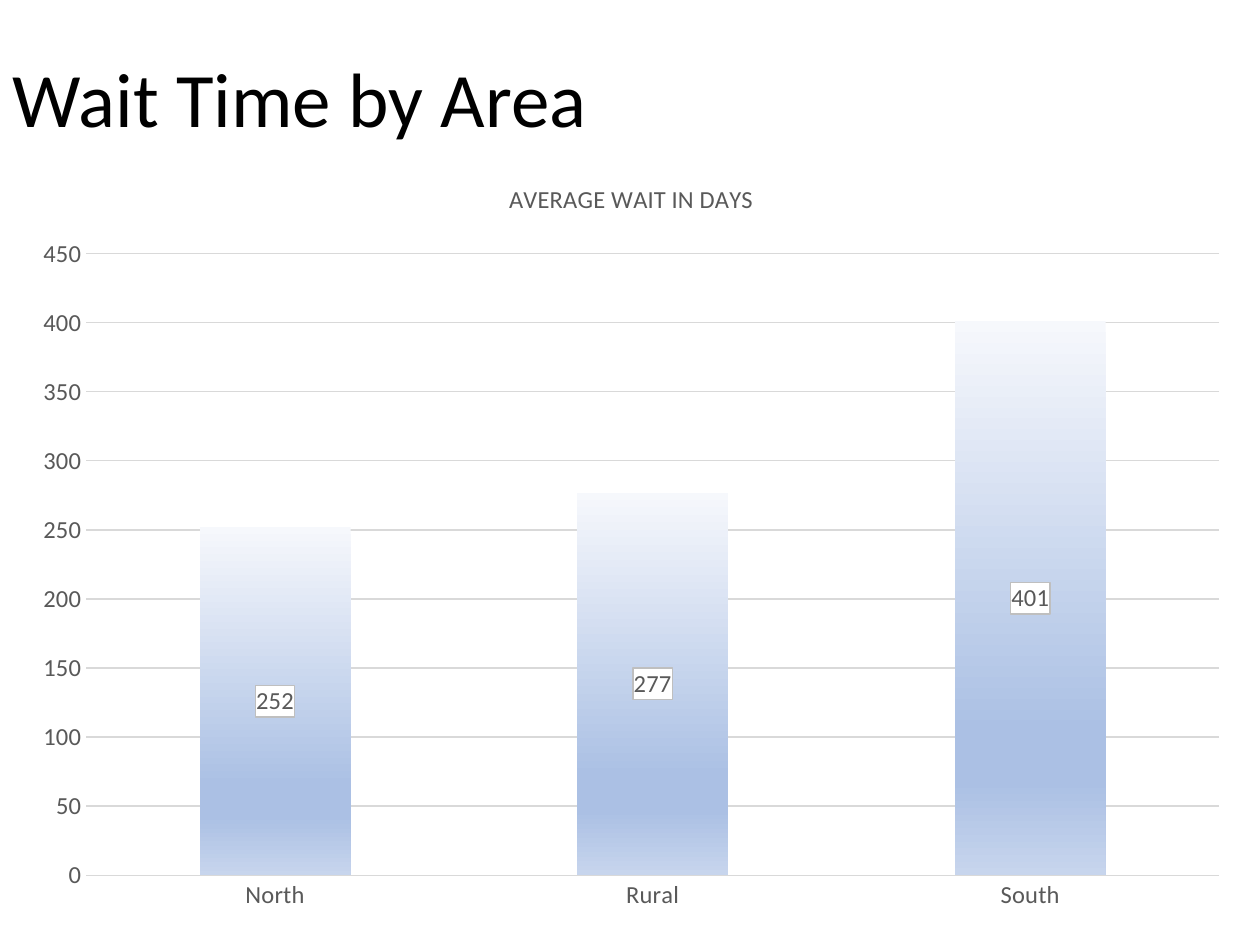
import pptx
import pptx.chart.data
import pptx.dml.color
import pptx.enum.chart
import pptx.enum.text
import pptx.oxml
import pptx.oxml.ns
import pptx.util

WIDTH, HEIGHT = pptx.util.Inches(10), pptx.util.Inches(7.5)
FONT = "Calibri"
COLORS = {"title": "000000", "text": "595959", "grid": "D9D9D9",
          "label_fill": "FFFFFF", "label_line": "BFBFBF"}
BAR_GRADIENT = [(0, "F6F8FC"), (74, "ABC0E4"), (83, "ABC0E4"), (100, "C7D5ED")]
WAIT_DAYS = {"North": 252, "Rural": 277, "South": 401}
# Inner plot area as shares of the chart
PLOT_LAYOUT = {"x": 0.055, "y": 0.127, "w": 0.925, "h": 0.807}
NAMESPACES = pptx.oxml.ns.nsdecls("c", "a")


def rgb(name):
    return pptx.dml.color.RGBColor.from_string(COLORS[name])


def apply_format(target, values):
    for name, value in values.items():
        setattr(target, name, value)


def format_font(font, size, color):
    apply_format(font, {"name": FONT, "size": pptx.util.Pt(size), "bold": False})
    font.color.rgb = rgb(color)


def box(left, top, width, height):
    """Turn shares of the slide into lengths."""
    return (int(left * WIDTH), int(top * HEIGHT),
            int(width * WIDTH), int(height * HEIGHT))


def add_title(slide, text):
    title = slide.shapes.title
    apply_format(title, dict(zip(("left", "top", "width", "height"),
                                 box(0, 0, 1, 0.217))))
    frame = title.text_frame
    apply_format(frame, {"text": text, "word_wrap": True,
                         "vertical_anchor": pptx.enum.text.MSO_ANCHOR.MIDDLE})
    paragraph = frame.paragraphs[0]
    apply_format(paragraph, {"alignment": pptx.enum.text.PP_ALIGN.LEFT,
                             "line_spacing": 0.9})
    format_font(paragraph.runs[0].font, 44, "title")


def format_axes(chart):
    for axis in (chart.category_axis, chart.value_axis):
        apply_format(axis, {
            "major_tick_mark": pptx.enum.chart.XL_TICK_MARK.NONE,
            "minor_tick_mark": pptx.enum.chart.XL_TICK_MARK.NONE})
        axis.format.line.fill.background()
        format_font(axis.tick_labels.font, 14, "text")
    value_axis = chart.value_axis
    apply_format(value_axis, {"minimum_scale": 0, "maximum_scale": 450,
                              "major_unit": 50, "has_major_gridlines": True})
    apply_format(value_axis.tick_labels,
                 {"number_format": "0", "number_format_is_linked": False})
    grid_line = value_axis.major_gridlines.format.line
    grid_line.color.rgb = rgb("grid")
    grid_line.width = pptx.util.Pt(0.75)


def fill_bars(series):
    """Give the bars a vertical gradient with several stops."""
    stops = "".join(
        f'<a:gs pos="{position * 1000}"><a:srgbClr val="{color}"/></a:gs>'
        for position, color in BAR_GRADIENT)
    series.format.fill.gradient()
    gradient = series.format.fill._xPr.find(pptx.oxml.ns.qn("a:gradFill"))
    gradient.getparent().replace(gradient, pptx.oxml.parse_xml(
        f'<a:gradFill {NAMESPACES}><a:gsLst>{stops}</a:gsLst>'
        '<a:lin ang="5400000" scaled="0"/></a:gradFill>'))
    series.format.line.fill.background()


def label_bars(series):
    labels = series.data_labels
    apply_format(labels, {
        "show_value": True, "number_format": "0",
        "number_format_is_linked": False,
        "position": pptx.enum.chart.XL_LABEL_POSITION.CENTER})
    format_font(labels.font, 14, "text")
    number_format = labels._element.find(pptx.oxml.ns.qn("c:numFmt"))
    number_format.addnext(pptx.oxml.parse_xml(
        f'<c:spPr {NAMESPACES}><a:solidFill>'
        f'<a:srgbClr val="{COLORS["label_fill"]}"/></a:solidFill>'
        f'<a:ln w="9525"><a:solidFill><a:srgbClr val="{COLORS["label_line"]}"/>'
        '</a:solidFill></a:ln></c:spPr>'))


def place_plot(chart):
    plot_area = chart._chartSpace.chart.plotArea
    for layout in plot_area.findall(pptx.oxml.ns.qn("c:layout")):
        plot_area.remove(layout)
    modes = '<c:xMode val="edge"/><c:yMode val="edge"/>'
    shares = "".join(f'<c:{key} val="{value}"/>'
                     for key, value in PLOT_LAYOUT.items())
    plot_area.insert(0, pptx.oxml.parse_xml(
        f'<c:layout {NAMESPACES}><c:manualLayout><c:layoutTarget val="inner"/>'
        f'{modes}{shares}</c:manualLayout></c:layout>'))


def add_wait_chart(slide):
    data = pptx.chart.data.CategoryChartData(number_format="0")
    data.categories = list(WAIT_DAYS)
    data.add_series("Series 1", list(WAIT_DAYS.values()))
    chart = slide.shapes.add_chart(
        pptx.enum.chart.XL_CHART_TYPE.COLUMN_STACKED,
        *box(0.015, 0.165, 0.972, 0.815), data).chart
    format_font(chart.font, 10, "title")
    apply_format(chart, {"has_legend": False, "has_title": True})
    # Chart heading
    heading = chart.chart_title.text_frame
    heading.text = "AVERAGE WAIT IN DAYS"
    format_font(heading.paragraphs[0].runs[0].font, 14, "text")
    chart.chart_title.include_in_layout = False
    # Bars
    plot = chart.plots[0]
    apply_format(plot, {"gap_width": 150, "overlap": 100,
                        "vary_by_categories": False})
    fill_bars(plot.series[0])
    label_bars(plot.series[0])
    format_axes(chart)
    place_plot(chart)


def main():
    presentation = pptx.Presentation()
    apply_format(presentation, {"slide_width": WIDTH, "slide_height": HEIGHT})
    slide = presentation.slides.add_slide(presentation.slide_layouts[5])
    add_title(slide, "Wait Time by Area")
    add_wait_chart(slide)
    presentation.save("out.pptx")


if __name__ == "__main__":
    main()
